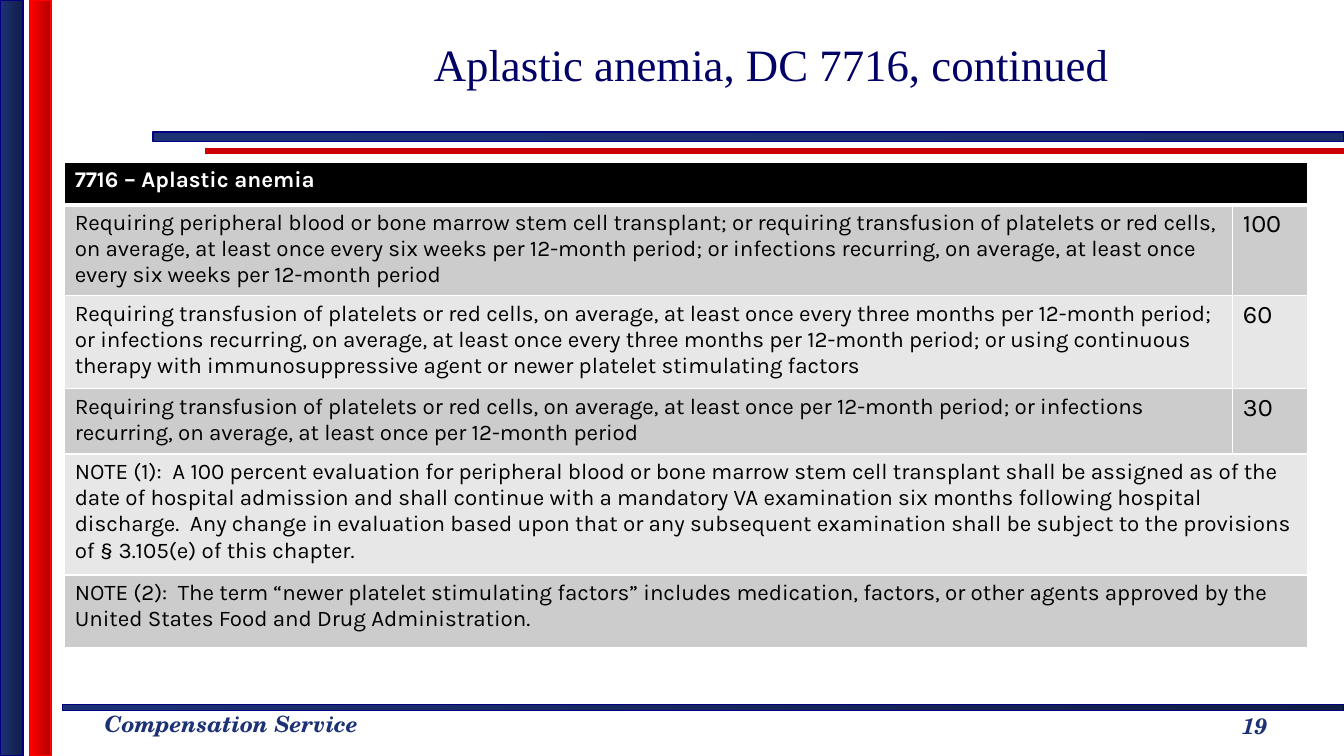
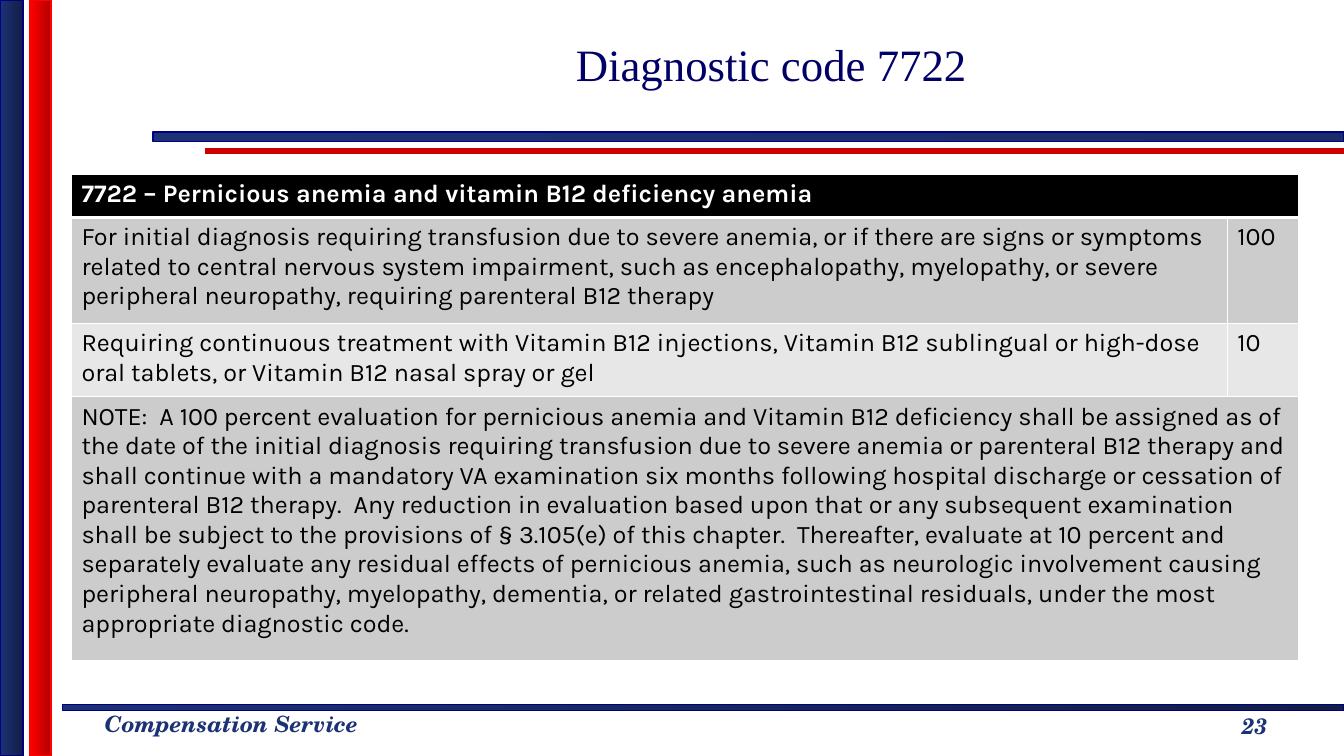
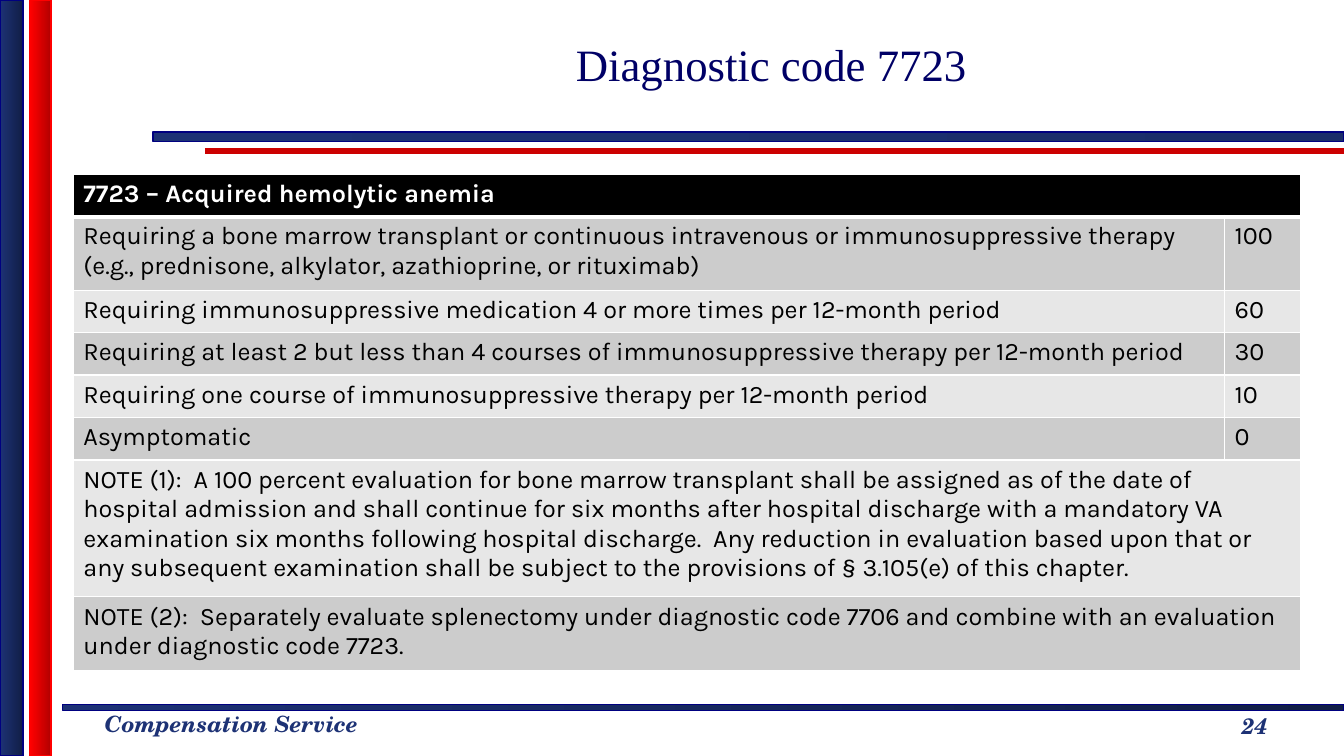
from lxml import etree
from pptx import Presentation
from pptx.dml.color import RGBColor
from pptx.enum.shapes import MSO_CONNECTOR, MSO_SHAPE
from pptx.enum.text import MSO_ANCHOR, MSO_AUTO_SIZE, PP_ALIGN
from pptx.oxml.ns import qn
from pptx.util import Cm, Pt

LEFT, CENTER = PP_ALIGN.LEFT, PP_ALIGN.CENTER
MIDDLE = MSO_ANCHOR.MIDDLE
FIT_SHAPE, NO_FIT = MSO_AUTO_SIZE.SHAPE_TO_FIT_TEXT, MSO_AUTO_SIZE.NONE
RECT, STRAIGHT = MSO_SHAPE.RECTANGLE, MSO_CONNECTOR.STRAIGHT

NAVY = RGBColor(0x1D, 0x32, 0x75)
NAVY_MID = RGBColor(0x1A, 0x2D, 0x69)
NAVY_DARK = RGBColor(0x11, 0x1E, 0x46)
NAVY_EDGE = RGBColor(0x00, 0x00, 0x80)
TITLE_BLUE = RGBColor(0x00, 0x00, 0x66)
RED = RGBColor(0xFF, 0x00, 0x00)
RED_DARK = RGBColor(0xB2, 0x00, 0x00)
RULE_RED = RGBColor(0xCC, 0x00, 0x00)
BLACK = RGBColor(0x00, 0x00, 0x00)
WHITE = RGBColor(0xFF, 0xFF, 0xFF)
BAND_DARK = RGBColor(0xCC, 0xCC, 0xCC)
BAND_LIGHT = RGBColor(0xE7, 0xE7, 0xE7)

TITLE_FONT, BODY_FONT, FOOTER_FONT = "Times New Roman", "Karla", "TeX Gyre Schola"
WIDTH, HEIGHT = 33.87, 19.05

BARS = [
    ((1.57, 17.75, 32.3, 0.15), NAVY, NAVY_DARK, NAVY_EDGE),
    ((3.86, 3.33, 30.01, 0.23), NAVY, NAVY_MID, NAVY_EDGE),
    ((0, 0, 0.58, HEIGHT), NAVY, NAVY_DARK, NAVY_EDGE),
    ((0.76, 0, 0.53, HEIGHT), RED, RED_DARK, RED),
]

SLIDES = [
    dict(
        title="Aplastic anemia, DC 7716, continued",
        number="19",
        origin=(1.63, 4.09),
        cols=(29.44, 1.88),
        size=16,
        heights=(1.07, 2.29, 2.34, 1.65, 3.05, 1.83),
        rows=[
            ("7716 – Aplastic anemia",),
            ("Requiring peripheral blood or bone marrow stem cell transplant; or requiring "
             "transfusion of platelets or red cells, on average, at least once every six weeks "
             "per 12-month period; or infections recurring, on average, at least once every six "
             "weeks per 12-month period", "100"),
            ("Requiring transfusion of platelets or red cells, on average, at least once every "
             "three months per 12-month period; or infections recurring, on average, at least "
             "once every three months per 12-month period; or using continuous therapy with "
             "immunosuppressive agent or newer platelet stimulating factors", "60"),
            ("Requiring transfusion of platelets or red cells, on average, at least once per "
             "12-month period; or infections recurring, on average, at least once per 12-month "
             "period", "30"),
            ("NOTE (1):  A 100 percent evaluation for peripheral blood or bone marrow stem cell "
             "transplant shall be assigned as of the date of hospital admission and shall "
             "continue with a mandatory VA examination six months following hospital discharge.  "
             "Any change in evaluation based upon that or any subsequent examination shall be "
             "subject to the provisions of § 3.105(e) of this chapter.",),
            ("NOTE (2):  The term “newer platelet stimulating factors” includes medication, "
             "factors, or other agents approved by the United States Food and Drug "
             "Administration.",),
        ],
    ),
    dict(
        title="Diagnostic code 7722",
        number="23",
        origin=(1.8, 4.39),
        cols=(29.13, 1.8),
        size=18,
        heights=(1.09, 2.67, 1.85, 6.65),
        rows=[
            ("7722 – Pernicious anemia and vitamin B12 deficiency anemia",),
            ("For initial diagnosis requiring transfusion due to severe anemia, or if there are "
             "signs or symptoms related to central nervous system impairment, such as "
             "encephalopathy, myelopathy, or severe peripheral neuropathy, requiring parenteral "
             "B12 therapy", "100"),
            ("Requiring continuous treatment with Vitamin B12 injections, Vitamin B12 sublingual "
             "or high-dose oral tablets, or Vitamin B12 nasal spray or gel", "10"),
            ("NOTE:  A 100 percent evaluation for pernicious anemia and Vitamin B12 deficiency "
             "shall be assigned as of the date of the initial diagnosis requiring transfusion "
             "due to severe anemia or parenteral B12 therapy and shall continue with a mandatory "
             "VA examination six months following hospital discharge or cessation of parenteral "
             "B12 therapy.  Any reduction in evaluation based upon that or any subsequent "
             "examination shall be subject to the provisions of § 3.105(e) of this chapter.  "
             "Thereafter, evaluate at 10 percent and separately evaluate any residual effects of "
             "pernicious anemia, such as neurologic involvement causing peripheral neuropathy, "
             "myelopathy, dementia, or related gastrointestinal residuals, under the most "
             "appropriate diagnostic code.",),
        ],
    ),
    dict(
        title="Diagnostic code 7723",
        number="24",
        origin=(1.85, 4.39),
        cols=(29.01, 1.91),
        size=18,
        heights=(1.07, 1.85, 1.07, 1.07, 1.07, 1.07, 3.45, 1.85),
        rows=[
            ("7723 – Acquired hemolytic anemia",),
            ("Requiring a bone marrow transplant or continuous intravenous or immunosuppressive "
             "therapy (e.g., prednisone, alkylator, azathioprine, or rituximab)", "100"),
            ("Requiring immunosuppressive medication 4 or more times per 12-month period", "60"),
            ("Requiring at least 2 but less than 4 courses of immunosuppressive therapy per "
             "12-month period", "30"),
            ("Requiring one course of immunosuppressive therapy per 12-month period", "10"),
            ("Asymptomatic", "0"),
            ("NOTE (1):  A 100 percent evaluation for bone marrow transplant shall be assigned "
             "as of the date of hospital admission and shall continue for six months after "
             "hospital discharge with a mandatory VA examination six months following hospital "
             "discharge.  Any reduction in evaluation based upon that or any subsequent "
             "examination shall be subject to the provisions of § 3.105(e) of this chapter.",),
            ("NOTE (2):  Separately evaluate splenectomy under diagnostic code 7706 and combine "
             "with an evaluation under diagnostic code 7723.",),
        ],
    ),
]


def cm(*values):
    """Convert numbers to centimetre lengths."""
    return [Cm(v) for v in values]


def write(tf, text, font=BODY_FONT, size=18, color=BLACK, bold=False, italic=False, align=LEFT):
    """Put one formatted paragraph into a text frame."""
    p = tf.paragraphs[0]
    p.alignment = align
    r = p.add_run()
    r.text = text
    r.font.name, r.font.size = font, Pt(size)
    r.font.bold, r.font.italic = bold, italic
    r.font.color.rgb = color


def add_bar(slide, box, start, end, edge):
    """Draw a bar with a left-to-right gradient."""
    sp = slide.shapes.add_shape(RECT, *cm(*box))
    sp.shadow.inherit = False
    sp.fill.gradient()
    sp.fill.gradient_angle = 0
    for stop, color in zip(sp.fill.gradient_stops, (start, end)):
        stop.color.rgb = color
    sp.line.color.rgb = edge
    sp.line.width = Pt(1)


def add_frame(slide):
    """Draw the red rule and the bars around the slide."""
    rule = slide.shapes.add_connector(STRAIGHT, *cm(5.16, 3.8, WIDTH, 3.8))
    rule.line.color.rgb = RULE_RED
    rule.line.width = Pt(4)
    etree.SubElement(rule._element.spPr, qn("a:effectLst"))
    for bar in BARS:
        add_bar(slide, *bar)


def add_title(slide, text):
    """Place and fill the title placeholder."""
    sp = slide.shapes.title
    sp.left, sp.top, sp.width, sp.height = cm(5.94, 0, 27, 3.2)
    tf = sp.text_frame
    tf.auto_size, tf.vertical_anchor = NO_FIT, MIDDLE
    write(tf, text, font=TITLE_FONT, size=32, color=TITLE_BLUE, align=CENTER)


def add_footer(slide, number):
    """Add the service name and the page number."""
    style = dict(font=FOOTER_FONT, size=16, color=NAVY, bold=True, italic=True)
    tf = slide.shapes.add_textbox(*cm(2.39, 17.78, 7.16, 0.94)).text_frame
    tf.word_wrap, tf.auto_size = False, FIT_SHAPE
    write(tf, "Compensation Service", **style)
    tf = slide.shapes.add_textbox(*cm(29.36, 17.65, 4.52, 1.27)).text_frame
    tf.word_wrap, tf.vertical_anchor = True, MIDDLE
    write(tf, number, align=CENTER, **style)


def style_cell(cell, fill, top, bottom):
    """Give a cell white borders and a solid fill."""
    tcPr = cell._tc.get_or_add_tcPr()
    for side, width in (("L", 1), ("R", 1), ("T", top), ("B", bottom)):
        ln = etree.SubElement(tcPr, qn(f"a:ln{side}"), w=str(Pt(width)))
        solid = etree.SubElement(ln, qn("a:solidFill"))
        etree.SubElement(solid, qn("a:srgbClr"), val=str(WHITE))
    cell.fill.solid()
    cell.fill.fore_color.rgb = fill


def add_rating_table(slide, origin, cols, heights, rows, size):
    """Build a table of criteria and ratings, merging rows with one entry."""
    box = cm(*origin, sum(cols), sum(heights))
    table = slide.shapes.add_table(len(rows), len(cols), *box).table
    table.first_row = table.horz_banding = False
    for col, width in zip(table.columns, cols):
        col.width = Cm(width)
    for i, (texts, height) in enumerate(zip(rows, heights)):
        table.rows[i].height = Cm(height)
        header = i == 0
        fill = BLACK if header else BAND_DARK if i % 2 else BAND_LIGHT
        for cell in table.rows[i].cells:
            style_cell(cell, fill, 3 if i == 1 else 1, 3 if header else 1)
        if len(texts) == 1:
            table.cell(i, 0).merge(table.cell(i, 1))
        for j, text in enumerate(texts):
            write(table.cell(i, j).text_frame, text, size=18 if j else size,
                  color=WHITE if header else BLACK, bold=header)


def add_rating_slide(prs, title, number, **table):
    """Add one slide with a title, a rating table and the shared frame."""
    slide = prs.slides.add_slide(prs.slide_layouts[5])
    add_frame(slide)
    add_title(slide, title)
    add_rating_table(slide, **table)
    add_footer(slide, number)


def main():
    """Build and save the presentation."""
    prs = Presentation()
    prs.slide_width, prs.slide_height = cm(WIDTH, HEIGHT)
    for content in SLIDES:
        add_rating_slide(prs, **content)
    prs.save("out.pptx")


if __name__ == "__main__":
    main()
